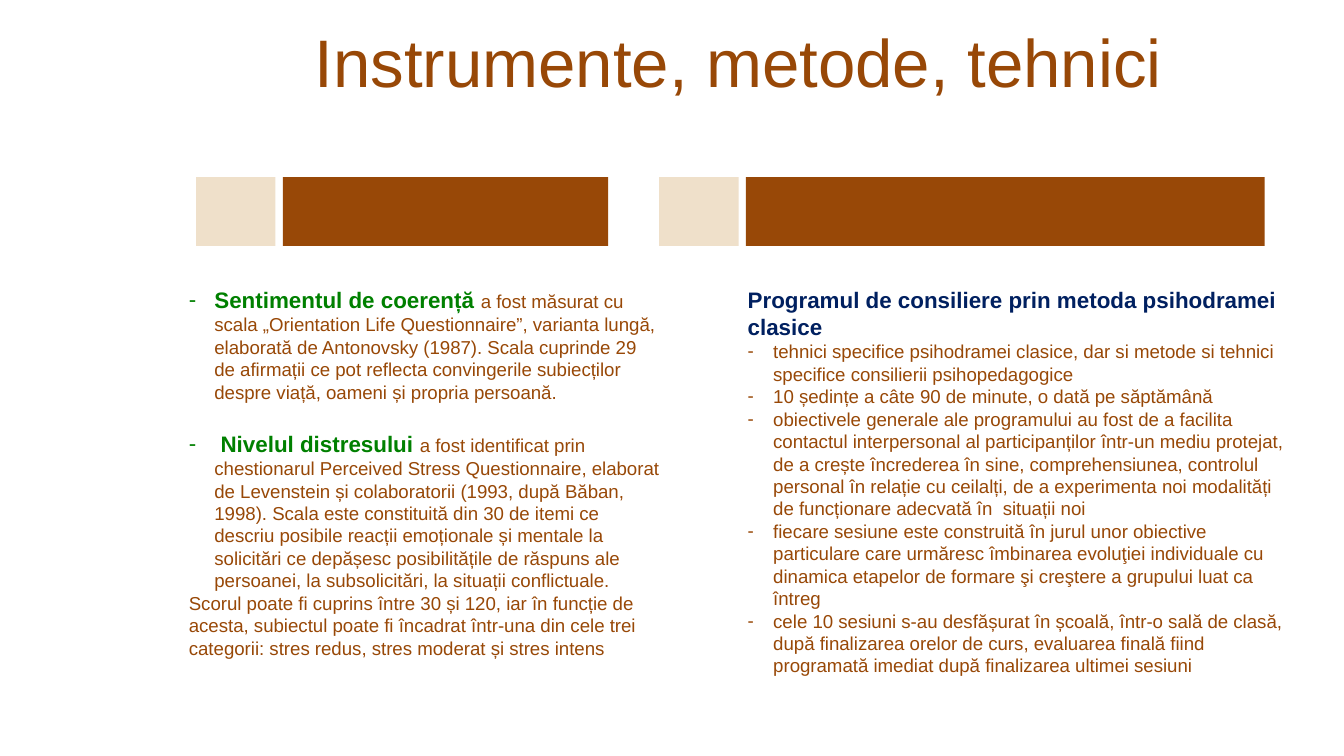
import pptx
import pptx.dml.color
import pptx.enum.shapes
import pptx.enum.text
import pptx.oxml.ns
import pptx.util
import lxml.etree

# Widescreen slide, 16:9
SLIDE_WIDTH = pptx.util.Inches(10)
SLIDE_HEIGHT = SLIDE_WIDTH * 9 // 16
BROWN, CREAM, GREEN, NAVY = "984807", "EFE0CA", "008000", "002060"
HANGING = pptx.util.Inches(0.19)

# Header bands, in percent of the slide
BAND_TOP, BAND_HEIGHT = 23.45, 9.1
TAB_WIDTH, TAB_GAP = 5.9, 0.55
BANDS = [(14.6, 24.2), (49.05, 38.6)]  # left edge, width of the brown bar

INSTRUMENTS = [
    ("Sentimentul de coerență ",
     "a fost măsurat cu scala „Orientation Life Questionnaire”, varianta lungă, "
     "elaborată de Antonovsky (1987). Scala cuprinde 29 de afirmații ce pot reflecta "
     "convingerile subiecților despre viață, oameni și propria persoană."),
    (" Nivelul distresului ",
     "a fost identificat prin chestionarul Perceived Stress Questionnaire, elaborat de "
     "Levenstein și colaboratorii (1993, după Băban, 1998). Scala este constituită din "
     "30 de itemi ce descriu posibile reacții emoționale și mentale la solicitări ce "
     "depășesc posibilitățile de răspuns ale persoanei, la subsolicitări, la situații "
     "conflictuale."),
]
SCORING = ("Scorul poate fi cuprins între 30 și 120, iar în funcție de acesta, subiectul "
           "poate fi încadrat într-una din cele trei categorii: stres redus, stres moderat "
           "și stres intens")
PROGRAMME = "Programul de consiliere prin metoda psihodramei clasice"
TECHNIQUES = [
    "tehnici specifice psihodramei clasice, dar si metode si tehnici specifice "
    "consilierii psihopedagogice",
    "10 ședințe a câte 90 de minute, o dată pe săptămână",
    "obiectivele generale ale programului au fost de a facilita contactul interpersonal "
    "al participanților într-un mediu protejat, de a crește încrederea în sine, "
    "comprehensiunea, controlul personal în relație cu ceilalți, de a experimenta noi "
    "modalități de funcționare adecvată în  situații noi",
    "fiecare sesiune este construită în jurul unor obiective particulare care urmăresc "
    "îmbinarea evoluţiei individuale cu dinamica etapelor de formare şi creştere a "
    "grupului luat ca întreg",
    "cele 10 sesiuni s-au desfășurat în școală, într-o sală de clasă, după finalizarea "
    "orelor de curs, evaluarea finală fiind programată imediat după finalizarea ultimei "
    "sesiuni",
]


def color(hex_value):
    return pptx.dml.color.RGBColor.from_string(hex_value)


def area(left, top, width, height):
    """Turn percentages of the slide into lengths."""
    return (int(SLIDE_WIDTH * left / 100), int(SLIDE_HEIGHT * top / 100),
            int(SLIDE_WIDTH * width / 100), int(SLIDE_HEIGHT * height / 100))


def place(placeholder, *shares, anchor=pptx.enum.text.MSO_ANCHOR.TOP):
    """Move a placeholder and return its text frame."""
    (placeholder.left, placeholder.top,
     placeholder.width, placeholder.height) = area(*shares)
    frame = placeholder.text_frame
    frame.word_wrap = True
    frame.auto_size = pptx.enum.text.MSO_AUTO_SIZE.NONE
    frame.vertical_anchor = anchor
    return frame


def add_text(paragraph, text, size=10, fill=BROWN, bold=False):
    run = paragraph.add_run()
    run.text = text
    run.font.name = "Arial"
    run.font.size = pptx.util.Pt(size)
    run.font.bold = bold
    run.font.color.rgb = color(fill)


def add_paragraph(frame, dash=False, before=0):
    """Start a paragraph, with a hanging dash if asked for."""
    first = frame.paragraphs[0]
    paragraph = frame.add_paragraph() if first.runs else first
    paragraph.alignment = pptx.enum.text.PP_ALIGN.LEFT
    paragraph.space_before = pptx.util.Pt(before)
    properties = paragraph._p.get_or_add_pPr()
    indent = HANGING if dash else 0
    properties.set("marL", str(indent))
    properties.set("indent", str(-indent))
    bullet = lxml.etree.SubElement(
        properties, pptx.oxml.ns.qn("a:buChar" if dash else "a:buNone"))
    if dash:
        bullet.set("char", "-")
    return paragraph


def add_block(slide, fill, *shares):
    block = slide.shapes.add_shape(
        pptx.enum.shapes.MSO_SHAPE.RECTANGLE, *area(*shares))
    block.shadow.inherit = False
    block.fill.solid()
    block.fill.fore_color.rgb = color(fill)
    block.line.fill.background()


def add_band(slide, left, bar_width):
    """Draw a cream tab followed by a brown bar."""
    add_block(slide, CREAM, left, BAND_TOP, TAB_WIDTH, BAND_HEIGHT)
    add_block(slide, BROWN, left + TAB_WIDTH + TAB_GAP, BAND_TOP, bar_width, BAND_HEIGHT)


def main():
    deck = pptx.Presentation()
    deck.slide_width, deck.slide_height = SLIDE_WIDTH, SLIDE_HEIGHT
    slide = deck.slides.add_slide(deck.slide_layouts.get_by_name("Two Content"))
    heading, instruments, programme = slide.placeholders

    # Title
    frame = place(heading, 22.4, 2.4, 77.6, 11.2,
                  anchor=pptx.enum.text.MSO_ANCHOR.MIDDLE)
    add_text(add_paragraph(frame), "Instrumente, metode, tehnici", size=36)

    # Header bands
    for left, bar_width in BANDS:
        add_band(slide, left, bar_width)

    # Left column: instruments
    frame = place(instruments, 13.05, 37, 37, 51.4)
    for index, (term, description) in enumerate(INSTRUMENTS):
        paragraph = add_paragraph(frame, dash=True, before=14.5 if index else 0)
        add_text(paragraph, term, size=12, fill=GREEN, bold=True)
        add_text(paragraph, description)
    add_text(add_paragraph(frame), SCORING)

    # Right column: counselling programme
    frame = place(programme, 54.63, 37, 41.85, 56.9)
    add_text(add_paragraph(frame), PROGRAMME, size=12, fill=NAVY, bold=True)
    for technique in TECHNIQUES:
        add_text(add_paragraph(frame, dash=True), technique)

    deck.save("out.pptx")


if __name__ == "__main__":
    main()
